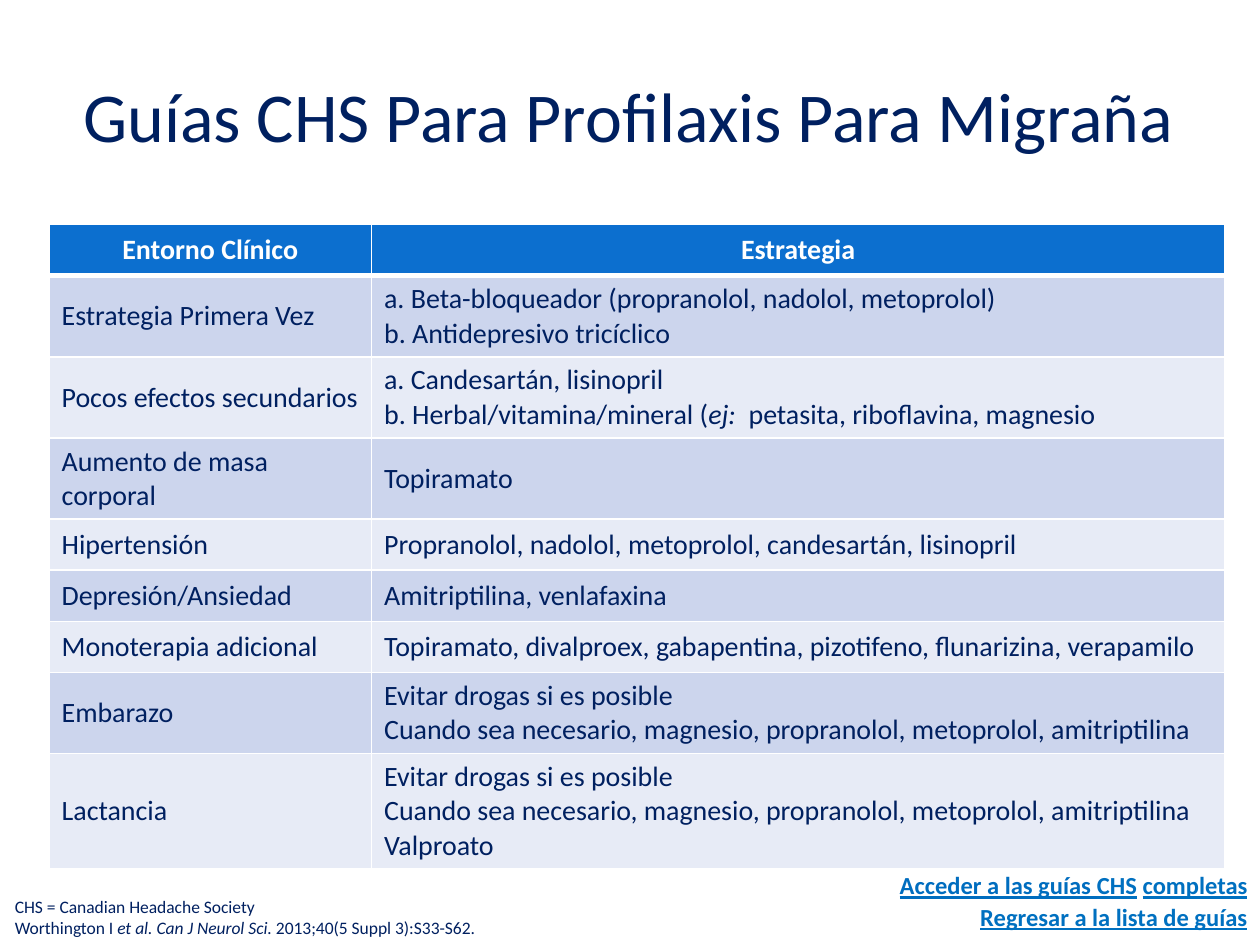
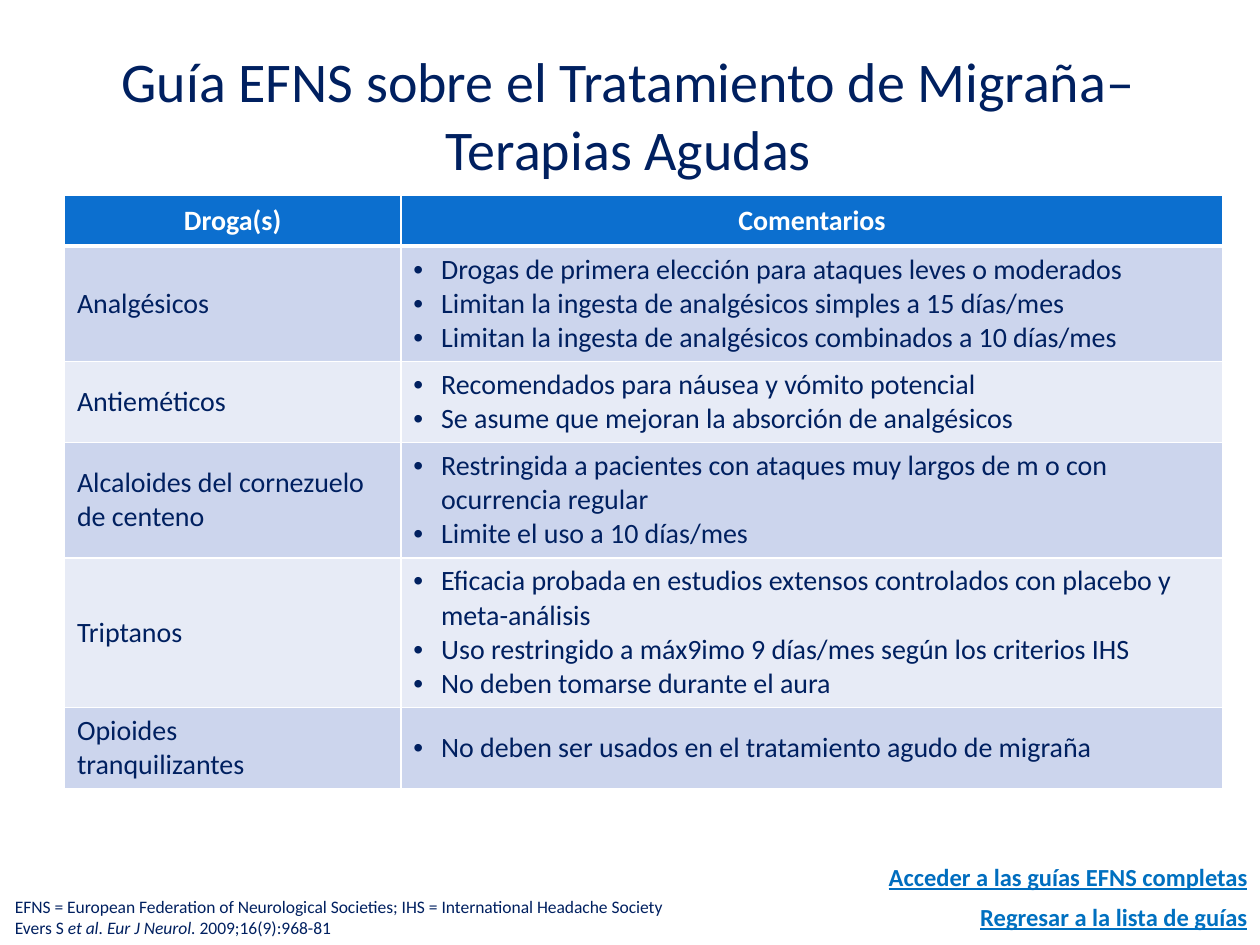
from lxml import etree
from pptx import Presentation
from pptx.dml.color import RGBColor
from pptx.enum.text import MSO_ANCHOR, MSO_AUTO_SIZE, PP_ALIGN
from pptx.oxml.ns import qn
from pptx.util import Cm, Pt

MIDDLE = MSO_ANCHOR.MIDDLE
LEFT, CENTER, RIGHT = PP_ALIGN.LEFT, PP_ALIGN.CENTER, PP_ALIGN.RIGHT
NO_FIT, FIT_SHAPE = MSO_AUTO_SIZE.NONE, MSO_AUTO_SIZE.SHAPE_TO_FIT_TEXT

COLORS = {
    "navy": "002060", "white": "FFFFFF", "header": "0C6FCF",
    "band_dark": "CCD5ED", "band_light": "E7EBF6",
    "link": "0070C0", "link_start": "006DBF",
}
FONT = "Calibri"
TITLE_BOX = (1.24, 0.71, 22.86, 3.18)
NOTE_BOX = (0.05, 17.93, 16.79, 1.12)
LINK_WIDTH, LINK_HEIGHT = 7.8, 0.86
BULLET_INDENT = 0.56
# Row heights for one, two, three and four lines of text
ROW_HEIGHTS = {1: 1.03, 2: 1.63, 3: 2.29, 4: 2.97}

BODY = {"size": Pt(16), "color": "navy", "bold": False}
HEADER = {"size": Pt(16), "color": "white", "bold": True}
NOTE = {"size": Pt(10), "color": "navy"}
LINK = {"size": Pt(14), "color": "link", "bold": True, "underline": True}
LINK_START = {**LINK, "color": "link_start"}

RETURN_LINK = [("Regresar a la lista de guías", LINK)]
AVOID_DRUGS = [
    "Evitar drogas si es posible",
    "Cuando sea necesario, magnesio, propranolol, metoprolol, amitriptilina",
]

# Each table row: line count, left cell, right cell; *asterisks* mark italics
SLIDES = [
    {
        "title": "Guías CHS Para Profilaxis Para Migraña",
        "title_size": 40,
        "table_at": (0.99, 4.53),
        "columns": (6.5, 17.2),
        "bullets": False,
        "rows": [
            (1, ["Entorno Clínico"], ["Estrategia"]),
            (2, ["Estrategia Primera Vez"],
             ["a. Beta-bloqueador (propranolol, nadolol, metoprolol)",
              "b. Antidepresivo tricíclico"]),
            (2, ["Pocos efectos secundarios"],
             ["a. Candesartán, lisinopril",
              "b. Herbal/vitamina/mineral (*ej: * petasita, riboflavina, magnesio"]),
            (2, ["Aumento de masa corporal"], ["Topiramato"]),
            (1, ["Hipertensión"],
             ["Propranolol, nadolol, metoprolol, candesartán, lisinopril"]),
            (1, ["Depresión/Ansiedad"], ["Amitriptilina, venlafaxina"]),
            (1, ["Monoterapia adicional"],
             ["Topiramato, divalproex, gabapentina, pizotifeno, flunarizina, verapamilo"]),
            (2, ["Embarazo"], AVOID_DRUGS),
            (3, ["Lactancia"], AVOID_DRUGS + ["Valproato"]),
        ],
        "note": ["CHS = Canadian Headache Society",
                 "Worthington I *et al. Can J Neurol Sci. *2013;40(5 Suppl 3):S33-S62."],
        "link": [("Acceder a las guías ", LINK_START), ("CHS", LINK),
                 (" ", {**LINK, "underline": False}), ("completas", LINK)],
        "link_top": 17.42,
    },
    {
        "title": "Guía EFNS sobre el Tratamiento de Migraña– Terapias Agudas",
        "title_size": 32,
        "table_at": (1.3, 3.93),
        "columns": (6.78, 16.58),
        "bullets": True,
        "rows": [
            (1, ["Droga(s)"], ["Comentarios"]),
            (3, ["Analgésicos"],
             ["Drogas de primera elección para ataques leves o moderados",
              "Limitan la ingesta de analgésicos simples a 15 días/mes",
              "Limitan la ingesta de analgésicos combinados a 10 días/mes"]),
            (2, ["Antieméticos"],
             ["Recomendados para náusea y vómito potencial",
              "Se asume que mejoran la absorción de analgésicos"]),
            (3, ["Alcaloides del cornezuelo de centeno"],
             ["Restringida a pacientes con ataques muy largos de m o con ocurrencia regular",
              "Limite el uso a 10 días/mes"]),
            (4, ["Triptanos"],
             ["Eficacia probada en estudios extensos controlados con placebo y meta-análisis",
              "Uso restringido a máx9imo 9 días/mes según los criterios IHS",
              "No deben tomarse durante el aura"]),
            (2, ["Opioides", "tranquilizantes"],
             ["No deben ser usados en el tratamiento agudo de migraña"]),
        ],
        "note": ["EFNS = European Federation of Neurological Societies; "
                 "IHS = International Headache Society",
                 "Evers S *et al. Eur J Neurol.* 2009;16(9):968-81"],
        "link": [("Acceder a las guías ", LINK_START), ("EFNS completas", LINK)],
        "link_top": 17.25,
    },
]


def rgb(name):
    return RGBColor.from_string(COLORS[name])


def set_attributes(target, values):
    for name, value in values.items():
        setattr(target, name, value)


def add_run(paragraph, text, style):
    run = paragraph.add_run()
    run.text = text
    values = {key: value for key, value in style.items() if key != "color"}
    set_attributes(run.font, {"name": FONT, **values})
    run.font.color.rgb = rgb(style["color"])


def add_bullet(paragraph):
    properties = paragraph._p.get_or_add_pPr()
    properties.set("marL", str(Cm(BULLET_INDENT)))
    properties.set("indent", str(-Cm(BULLET_INDENT)))
    etree.SubElement(properties, qn("a:buFont"), typeface="Arial")
    etree.SubElement(properties, qn("a:buChar"), char="•")


def write_lines(frame, lines, style, alignment=LEFT, bullets=False):
    for index, line in enumerate(lines):
        paragraph = frame.add_paragraph() if index else frame.paragraphs[0]
        paragraph.alignment = alignment
        if bullets:
            add_bullet(paragraph)
        for part, text in enumerate(line.split("*")):
            if text:
                add_run(paragraph, text, {**style, "italic": part % 2 == 1})


def set_borders(cell, widths):
    """Draw white cell borders; widths are points for left, right, top, bottom."""
    properties = cell._tc.get_or_add_tcPr()
    for position, (side, width) in enumerate(zip("LRTB", widths)):
        line = etree.Element(qn(f"a:ln{side}"), w=str(Pt(width)))
        fill = etree.SubElement(line, qn("a:solidFill"))
        etree.SubElement(fill, qn("a:srgbClr"), val=COLORS["white"])
        properties.insert(position, line)


def add_title(slide, text, size, box):
    title = slide.shapes.title
    left, top, width, height = map(Cm, box)
    set_attributes(title, {"left": left, "top": top, "width": width, "height": height})
    set_attributes(title.text_frame, {
        "word_wrap": True, "auto_size": NO_FIT, "vertical_anchor": MIDDLE})
    write_lines(title.text_frame, [text], {"size": Pt(size), "color": "navy"}, CENTER)


def add_guide_table(slide, rows, position, columns, bullets):
    heights = [ROW_HEIGHTS[line_count] for line_count, *_ in rows]
    left, top = position
    table = slide.shapes.add_table(
        len(rows), len(columns), Cm(left), Cm(top),
        Cm(sum(columns)), Cm(sum(heights))).table
    table.horz_banding = False
    for column, width in zip(table.columns, columns):
        column.width = Cm(width)
    for row_index, (_, *texts) in enumerate(rows):
        table.rows[row_index].height = Cm(heights[row_index])
        is_header = row_index == 0
        band = "header" if is_header else ("band_light", "band_dark")[row_index % 2]
        for column_index, lines in enumerate(texts):
            cell = table.cell(row_index, column_index)
            cell.vertical_anchor = MIDDLE
            cell.fill.solid()
            cell.fill.fore_color.rgb = rgb(band)
            set_borders(cell, (1, 1, 3 if row_index == 1 else 1, 3 if is_header else 1))
            write_lines(cell.text_frame, lines, HEADER if is_header else BODY,
                        CENTER if is_header else LEFT,
                        bullets and column_index == 1 and not is_header)


def add_note(slide, lines, box):
    frame = slide.shapes.add_textbox(*map(Cm, box)).text_frame
    set_attributes(frame, {"word_wrap": True, "auto_size": FIT_SHAPE})
    write_lines(frame, lines, NOTE)


def add_link(slide, runs, right, top):
    frame = slide.shapes.add_textbox(
        Cm(right - LINK_WIDTH), Cm(top), Cm(LINK_WIDTH), Cm(LINK_HEIGHT)).text_frame
    set_attributes(frame, {"word_wrap": True, "auto_size": FIT_SHAPE})
    paragraph = frame.paragraphs[0]
    paragraph.alignment = RIGHT
    for text, style in runs:
        add_run(paragraph, text, style)


def add_guide_slide(presentation, content):
    slide = presentation.slides.add_slide(presentation.slide_layouts[5])
    slide.background.fill.solid()
    slide.background.fill.fore_color.rgb = rgb("white")
    add_title(slide, content["title"], content["title_size"], TITLE_BOX)
    add_guide_table(slide, content["rows"], content["table_at"],
                    content["columns"], content["bullets"])
    # Footer: source note on the left, links on the right
    add_note(slide, content["note"], NOTE_BOX)
    add_link(slide, content["link"], 25.4, content["link_top"])
    add_link(slide, RETURN_LINK, 25.4, 18.06)


def main():
    presentation = Presentation()
    presentation.slide_width, presentation.slide_height = Cm(25.4), Cm(19.05)
    for content in SLIDES:
        add_guide_slide(presentation, content)
    presentation.save("out.pptx")


if __name__ == "__main__":
    main()
